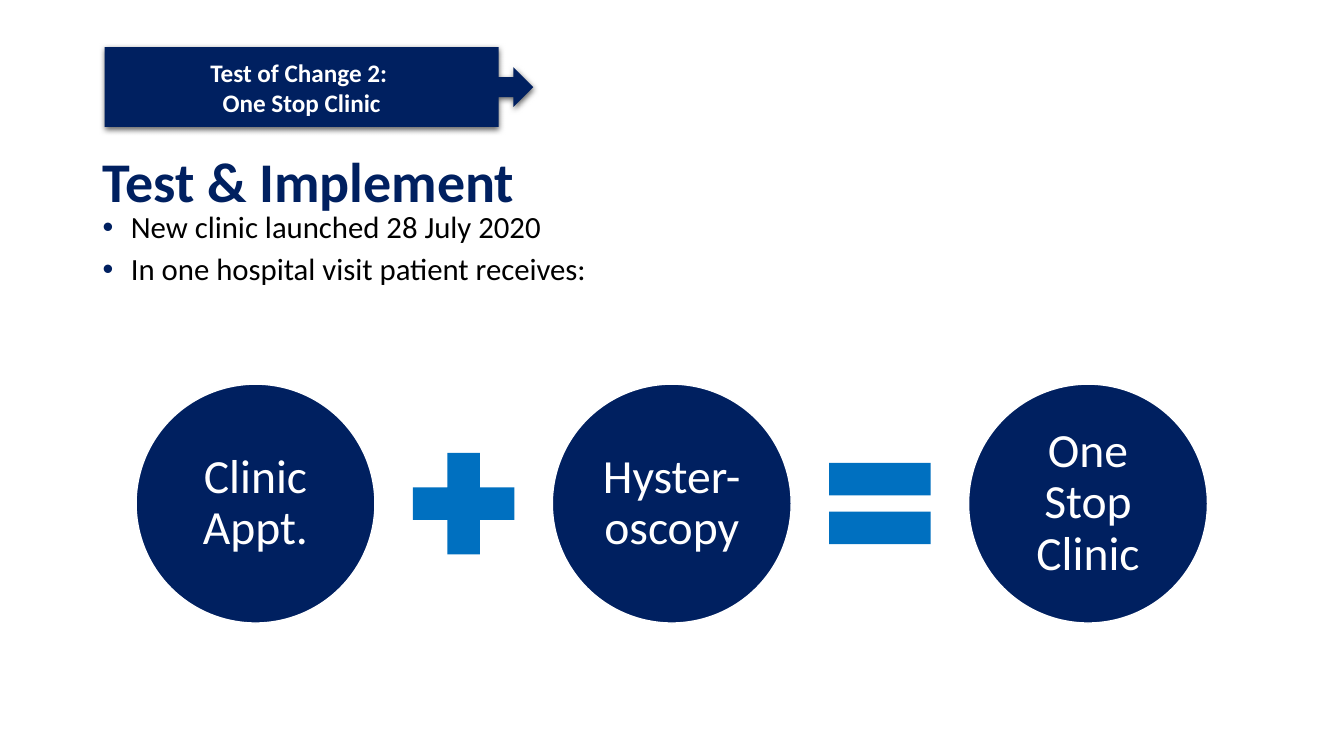
from lxml import etree
from pptx import Presentation
from pptx.dml.color import RGBColor
from pptx.enum.shapes import MSO_SHAPE
from pptx.enum.text import MSO_ANCHOR, PP_ALIGN
from pptx.oxml import parse_xml
from pptx.oxml.ns import nsdecls, qn
from pptx.util import Cm, Pt

CALLOUT = MSO_SHAPE.RIGHT_ARROW_CALLOUT
CIRCLE = MSO_SHAPE.OVAL
PLUS = MSO_SHAPE.MATH_PLUS
EQUAL = MSO_SHAPE.MATH_EQUAL
CENTER = PP_ALIGN.CENTER
MIDDLE = MSO_ANCHOR.MIDDLE

FONT = "Calibri"
COLORS = {"navy": "002060", "blue": "0070C0", "white": "FFFFFF", "black": "000000"}


def color(name):
    return RGBColor.from_string(COLORS[name])


def style_font(font, size, color_name, bold=False):
    font.name = FONT
    font.size = Pt(size)
    font.bold = bold
    font.color.rgb = color(color_name)


def add_filled_shape(slide, kind, box, fill, adjustments=()):
    shape = slide.shapes.add_shape(kind, *(Cm(length) for length in box))
    shape.shadow.inherit = False
    shape.fill.solid()
    shape.fill.fore_color.rgb = color(fill)
    shape.line.fill.background()
    for index, value in enumerate(adjustments):
        shape.adjustments[index] = value
    return shape


def write_centered(shape, text, size, bold=False, line_spacing=1.0):
    frame = shape.text_frame
    frame.word_wrap = True
    frame.vertical_anchor = MIDDLE
    frame.text = text
    for paragraph in frame.paragraphs:
        paragraph.alignment = CENTER
        paragraph.line_spacing = line_spacing
        for run in paragraph.runs:
            style_font(run.font, size, "white", bold)


def add_shadow(shape):
    effects = shape._element.spPr.find(qn("a:effectLst"))
    effects.append(parse_xml(
        f'<a:outerShdw {nsdecls("a")} blurRad="{Pt(4.5)}" dist="{Pt(1.5)}" '
        'dir="5400000" rotWithShape="0">'
        f'<a:srgbClr val="{COLORS["black"]}"><a:alpha val="62000"/></a:srgbClr>'
        '</a:outerShdw>'))


def set_indent(paragraph, indent):
    properties = paragraph._p.get_or_add_pPr()
    properties.set("marL", str(Cm(indent)))
    properties.set("indent", str(-Cm(indent)))
    return properties


def add_bullet(paragraph, indent):
    properties = set_indent(paragraph, indent)
    bullet_color = etree.SubElement(properties, qn("a:buClr"))
    etree.SubElement(bullet_color, qn("a:srgbClr"), val=COLORS["navy"])
    etree.SubElement(properties, qn("a:buFont"), typeface="Arial")
    etree.SubElement(properties, qn("a:buChar"), char="•")


def add_stage_callout(slide, box, text):
    callout = add_filled_shape(slide, CALLOUT, box, "navy", (0.25, 0.25, 0.25, 0.919))
    add_shadow(callout)
    write_centered(callout, text, 18, bold=True)


def add_summary(slide, box, heading, points):
    frame = slide.shapes.add_textbox(*(Cm(length) for length in box)).text_frame
    frame.word_wrap = True

    # Heading
    title = frame.paragraphs[0]
    title.text = heading
    set_indent(title, 0.64)
    title.line_spacing = 0.7
    style_font(title.runs[0].font, 40, "navy", bold=True)

    # Bullets
    for index, point in enumerate(points):
        paragraph = frame.add_paragraph()
        paragraph.text = point
        paragraph.line_spacing = 0.9
        paragraph.space_before = Pt(6 if index else 0)
        add_bullet(paragraph, 0.71)
        style_font(paragraph.runs[0].font, 22, "black")


def add_equation(slide, box, terms, operators):
    left, top, width, diameter = box
    pitch = (width - diameter) / (len(terms) - 1)

    # Circles
    for index, term in enumerate(terms):
        circle_box = (left + index * pitch, top, diameter, diameter)
        circle = add_filled_shape(slide, CIRCLE, circle_box, "navy")
        circle.line.color.rgb = color("white")
        circle.line.width = Pt(1)
        frame = circle.text_frame
        frame.margin_left = frame.margin_right = Cm(0.12)
        frame.margin_top = frame.margin_bottom = Cm(0.12)
        write_centered(circle, term, 34, line_spacing=0.9)

    # Operators, centred between neighbouring circles
    size = 3.48
    for index, (kind, adjustments) in enumerate(operators):
        center = left + diameter / 2 + (index + 0.5) * pitch
        operator_box = (center - size / 2, top + (diameter - size) / 2, size, size)
        add_filled_shape(slide, kind, operator_box, "blue", adjustments)


def main():
    presentation = Presentation()
    presentation.slide_width = Cm(33.87)
    presentation.slide_height = Cm(19.05)
    slide = presentation.slides.add_slide(presentation.slide_layouts[6])

    add_equation(slide, (3.43, 9.68, 27, 6.02),
                 ["Clinic Appt.", "Hyster-oscopy", "One Stop Clinic"],
                 [(PLUS, (0.235,)), (EQUAL, (0.235, 0.118))])
    add_summary(slide, (2.34, 4.04, 20.75, 1.88), "Test & Implement",
                ["New clinic launched 28 July 2020",
                 "In one hospital visit patient receives:"])
    add_stage_callout(slide, (2.64, 1.19, 10.8, 2.01),
                      "Test of Change 2: \nOne Stop Clinic")

    presentation.save("out.pptx")


if __name__ == "__main__":
    main()
